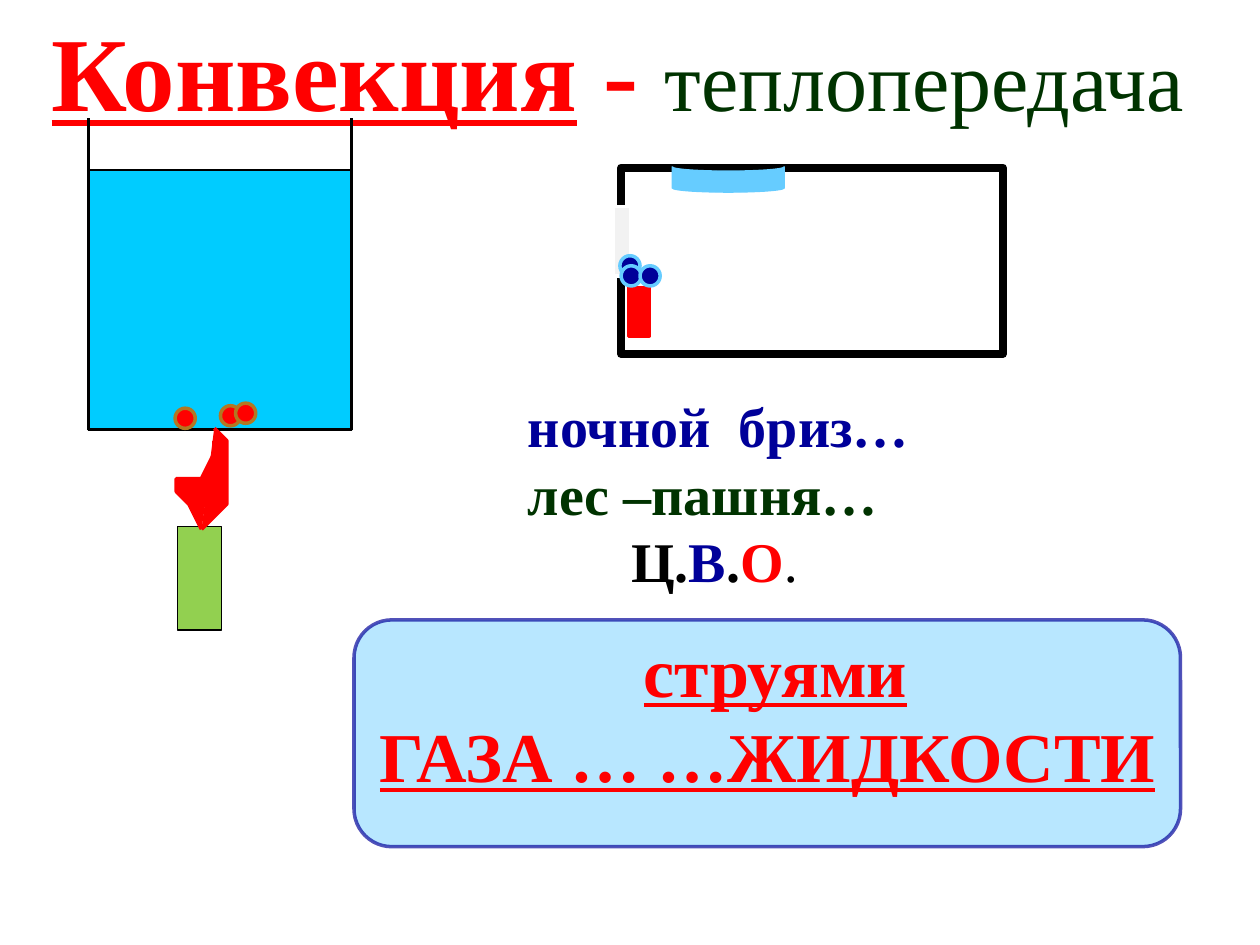
from pptx import Presentation
from pptx.dml.color import RGBColor
from pptx.enum.shapes import MSO_CONNECTOR, MSO_SHAPE
from pptx.enum.text import MSO_ANCHOR, MSO_AUTO_SIZE, PP_ALIGN
from pptx.oxml.ns import qn
from pptx.util import Inches, Pt
from lxml import etree

RECT, ROUNDED, OVAL = MSO_SHAPE.RECTANGLE, MSO_SHAPE.ROUNDED_RECTANGLE, MSO_SHAPE.OVAL
STORAGE = MSO_SHAPE.FLOWCHART_STORED_DATA
STRAIGHT = MSO_CONNECTOR.STRAIGHT
LEFT, CENTER = PP_ALIGN.LEFT, PP_ALIGN.CENTER
TOP, MIDDLE = MSO_ANCHOR.TOP, MSO_ANCHOR.MIDDLE
NO_FIT = MSO_AUTO_SIZE.NONE

RED = RGBColor(0xFF, 0x00, 0x00)
NAVY = RGBColor(0x00, 0x00, 0x99)
DARK_GREEN = RGBColor(0x00, 0x33, 0x00)
BLACK = RGBColor(0x00, 0x00, 0x00)
WHITE = RGBColor(0xFF, 0xFF, 0xFF)
WATER = RGBColor(0x00, 0xCC, 0xFF)
SKY = RGBColor(0x66, 0xCC, 0xFF)
BROWN = RGBColor(0xB2, 0x78, 0x22)
LIME = RGBColor(0x92, 0xD0, 0x50)
PALE_GREY = RGBColor(0xF2, 0xF2, 0xF2)

FONT = "Times New Roman"
CELL = Inches(0.1)  # the slide is a grid of 100 columns by 75 rows
PARTICLE = 1.6


def cells(*lengths):
    return [round(length * CELL) for length in lengths]


def set_alpha(color_format_parent, percent):
    color = color_format_parent.find(".//" + qn("a:srgbClr"))
    etree.SubElement(color, qn("a:alpha")).set("val", str(percent * 1000))


class SlideBuilder:
    """Holds the slide and draws styled elements on the grid."""

    def __init__(self, slide):
        self.slide = slide
        self.shapes = slide.shapes

    def paint(self, shape, fill, line, width):
        shape.shadow.inherit = False
        if fill is None:
            shape.fill.background()
        else:
            shape.fill.solid()
            shape.fill.fore_color.rgb = fill
        shape.line.color.rgb = line
        shape.line.width = Pt(width)
        return shape

    def shape(self, kind, box, fill, line, width):
        return self.paint(self.shapes.add_shape(kind, *cells(*box)), fill, line, width)

    def particles(self, corners, fill, line):
        for left, top in corners:
            self.shape(OVAL, (left, top, PARTICLE, PARTICLE), fill, line, 2)

    def line(self, start, end, width):
        edge = self.shapes.add_connector(STRAIGHT, *cells(*start, *end))
        edge.line.color.rgb = BLACK
        edge.line.width = Pt(width)
        etree.SubElement(edge._element.spPr, qn("a:effectLst"))

    def outline(self, points, color, width):
        builder = self.shapes.build_freeform(*points[0], scale=CELL)
        builder.add_line_segments(points[1:], close=False)
        self.paint(builder.convert_to_shape(), color, color, width)

    def text(self, holder, box, lines, anchor=MIDDLE, pitch=None):
        """Each line is (alignment, runs); a run is (text, size, colour, bold, underline)."""
        holder.left, holder.top, holder.width, holder.height = cells(*box)
        frame = holder.text_frame
        frame.word_wrap = False
        frame.auto_size = NO_FIT
        frame.vertical_anchor = anchor
        for index, (alignment, runs) in enumerate(lines):
            paragraph = frame.add_paragraph() if index else frame.paragraphs[0]
            paragraph.alignment = alignment
            paragraph.space_before = Pt(0)
            if pitch:
                paragraph.line_spacing = Pt(pitch)
            properties = paragraph._p.get_or_add_pPr()
            properties.set("marL", "0")
            properties.set("indent", "0")
            etree.SubElement(properties, qn("a:buNone"))
            for wording, size, color, bold, underline in runs:
                run = paragraph.add_run()
                run.text = wording
                font = run.font
                font.name, font.size, font.bold = FONT, Pt(size), bold
                font.underline = underline
                font.color.rgb = color
        return frame


def main():
    deck = Presentation()
    deck.slide_width, deck.slide_height = cells(100, 75)
    page = SlideBuilder(deck.slides.add_slide(deck.slide_layouts[1]))
    title, examples = page.slide.placeholders

    # Title and list of examples
    page.text(title, (3.1, 0, 95.6, 11.1), [
        (LEFT, [("Конвекция", 60, RED, True, True),
                (" - ", 60, RED, True, False),
                ("теплопередача", 48, DARK_GREEN, False, False)]),
    ], TOP)
    page.text(examples, (40.9, 30.5, 32.6, 17.2), [
        (LEFT, [("ночной  бриз…", 32, NAVY, True, False)]),
        (LEFT, [("лес –пашня…", 32, DARK_GREEN, True, False)]),
        (CENTER, [("Ц.", 32, BLACK, True, False),
                  ("В", 32, NAVY, True, False),
                  (".", 32, BLACK, True, False),
                  ("О", 32, RED, True, False),
                  (".", 32, BLACK, False, False),
                  (" ", 28, BLACK, False, False)]),
    ], pitch=38.5)

    # Conclusion banner
    banner = page.shape(ROUNDED, (28.1, 49.2, 65.6, 18), SKY, NAVY, 2)
    set_alpha(banner._element.spPr.find(qn("a:solidFill")), 46)
    set_alpha(banner._element.spPr.find(qn("a:ln")), 68)
    conclusion = page.text(page.shapes.add_textbox(0, 0, 0, 0), (28.9, 49.2, 65.3, 14), [
        (CENTER, [("струями", 40, RED, True, True)]),
        (CENTER, [("ГАЗА … …ЖИДКОСТИ", 40, RED, True, True),
                  (" ", 36, RED, False, False)]),
    ], pitch=48.6)
    conclusion.margin_bottom = 0

    # Vessel with water
    left, right, rim, surface, bottom = 7, 27.9, 9.4, 13.5, 34.1
    page.shape(RECT, (left, surface, right - left, bottom - surface), WATER, BLACK, 1.5)
    for wall in (left, right):
        page.line((wall, rim), (wall, bottom), 1.5)
    page.line((left, bottom), (right, bottom), 1.5)

    # Candle and flame
    page.shape(RECT, (14.1, 41.8, 3.5, 8.2), LIME, BLACK, 0.75)
    page.outline([(16, 41.6), (16.8, 41.2), (17.5, 40.5), (17.9, 39.3), (18.1, 38.7),
                  (18, 37.2), (17.8, 35.9), (17.5, 35.1), (17, 34.4)], RED, 2.25)
    page.outline([(15.5, 41.6), (15, 40.1), (14.3, 39.1), (14.5, 38.2), (14.9, 37.8),
                  (16, 37.7), (16.7, 36), (17, 35.6), (17, 34.8)], RED, 2.25)

    # Room with ceiling cooler and window
    page.shape(RECT, (49.3, 13.3, 30.3, 14.8), None, BLACK, 4.5)
    cooler = page.shape(STORAGE, (56.8, 9.8, 2, 8.9), SKY, SKY, 0.75)
    cooler.rotation = 270
    cooler._element.spPr.find(qn("a:xfrm")).set("flipV", "1")
    page.shape(RECT, (48.7, 16.4, 1.4, 5.5), PALE_GREY, WHITE, 2)

    # Warm particles in the water, cold ones around the heater
    page.particles([(13.9, 32.4), (17.5, 32.2), (18.7, 32)], RED, BROWN)
    page.particles([(49.2, 20.3)], NAVY, SKY)
    page.shape(RECT, (49.9, 22.8, 1.6, 3.9), RED, RED, 2)
    page.particles([(49.3, 21.1), (50.8, 21.1)], NAVY, SKY)

    deck.save("out.pptx")


if __name__ == "__main__":
    main()
